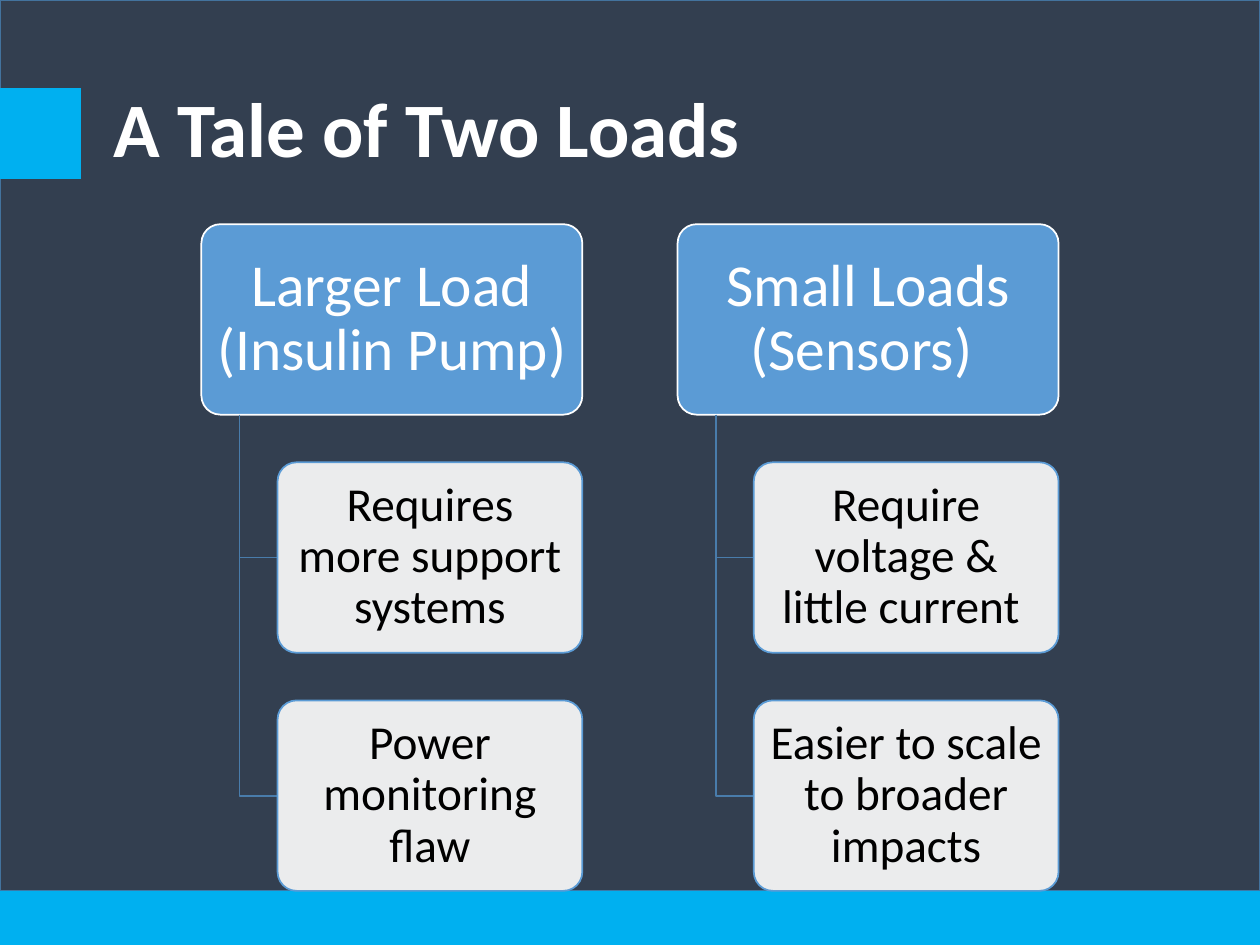
from lxml.etree import SubElement
from pptx import Presentation
from pptx.dml.color import RGBColor
from pptx.enum.shapes import MSO_SHAPE as Shape
from pptx.enum.text import MSO_ANCHOR as Anchor, PP_ALIGN as Align
from pptx.oxml.ns import qn
from pptx.util import Cm, Pt

SLIDE_W, SLIDE_H = 25.4, 19.05
FOOTER_TOP = 17.96
NAVY, CYAN, BLUE, WHITE, BLACK = "333F50", "00B0F0", "5B9BD5", "FFFFFF", "000000"

TREE_LEFT, TREE_TOP = 4.06, 4.52
HEAD_W, BOX_H = 7.68, 3.84
COLUMN_STEP, ROW_STEP = HEAD_W * 1.25, BOX_H * 1.25
INDENT = HEAD_W * 0.2

LOADS = [
    ("Larger Load (Insulin Pump)",
     ["Requires more support systems", "Power monitoring flaw"]),
    ("Small Loads (Sensors) ",
     ["Require voltage & little current ", "Easier to scale to broader impacts"]),
]


def paint(color_format, color):
    color_format.rgb = RGBColor.from_string(color)


def style(shape, fill=None, line=None, opacity=100):
    shape.shadow.inherit = False
    if fill:
        shape.fill.solid()
        paint(shape.fill.fore_color, fill)
        if opacity < 100:
            rgb = shape.fill._xPr.find(".//" + qn("a:srgbClr"))
            SubElement(rgb, qn("a:alpha"), val=str(opacity * 1000))
    else:
        shape.fill.background()
    if line:
        paint(shape.line.color, line)
        shape.line.width = Pt(1)
    else:
        shape.line.fill.background()


def add_block(slide, left, top, width, height, kind=Shape.RECTANGLE, **look):
    block = slide.shapes.add_shape(kind, Cm(left), Cm(top), Cm(width), Cm(height))
    style(block, **look)
    return block


def write(shape, text, size, color, bold=False, align=Align.LEFT, margins=(0.25, 0.13)):
    frame = shape.text_frame
    frame.word_wrap = True
    frame.vertical_anchor = Anchor.MIDDLE
    frame.margin_left = frame.margin_right = Cm(margins[0])
    frame.margin_top = frame.margin_bottom = Cm(margins[1])
    paragraph = frame.paragraphs[0]
    paragraph.alignment = align
    paragraph.line_spacing = 0.9
    run = paragraph.add_run()
    run.text = text
    run.font.name, run.font.size, run.font.bold = "Calibri", Pt(size), bold
    paint(run.font.color, color)


def add_card(slide, left, top, width, text, size, color, margins, **look):
    card = add_block(slide, left, top, width, BOX_H, Shape.ROUNDED_RECTANGLE, **look)
    card.adjustments[0] = 0.1
    write(card, text, size, color, align=Align.CENTER, margins=margins)


def add_branch(slide, left, top, right, bottom):
    builder = slide.shapes.build_freeform(Cm(left), Cm(top))
    builder.add_line_segments([(Cm(left), Cm(bottom)), (Cm(right), Cm(bottom))], close=False)
    style(builder.convert_to_shape(), line="497CAB")


def add_load(slide, left, heading, traits):
    add_card(slide, left, TREE_TOP, HEAD_W, heading, 34, WHITE, (0.18, 0.12),
             fill=BLUE, line=WHITE)
    trait_left = left + INDENT
    for row, trait in enumerate(traits, start=1):
        top = TREE_TOP + row * ROW_STEP
        add_branch(slide, left + INDENT / 2, TREE_TOP + BOX_H, trait_left, top + BOX_H / 2)
        add_card(slide, trait_left, top, HEAD_W - INDENT, trait, 27, BLACK, (0.15, 0.1),
                 fill=WHITE, line=BLUE, opacity=90)


def main():
    deck = Presentation()
    deck.slide_width, deck.slide_height = Cm(SLIDE_W), Cm(SLIDE_H)
    slide = deck.slides.add_slide(deck.slide_layouts[6])

    add_block(slide, 0, 0, SLIDE_W, FOOTER_TOP, fill=NAVY, line="43739E")
    title = slide.shapes.add_textbox(Cm(2.03), Cm(0.84), Cm(23), Cm(3.68))
    write(title, "A Tale of Two Loads", 44, WHITE, bold=True)
    add_block(slide, 0, FOOTER_TOP, SLIDE_W, SLIDE_H - FOOTER_TOP, fill=CYAN)
    add_block(slide, 0, 1.78, 1.63, 1.83, fill=CYAN)

    for column, (heading, traits) in enumerate(LOADS):
        add_load(slide, TREE_LEFT + column * COLUMN_STEP, heading, traits)

    deck.save("out.pptx")


if __name__ == "__main__":
    main()
